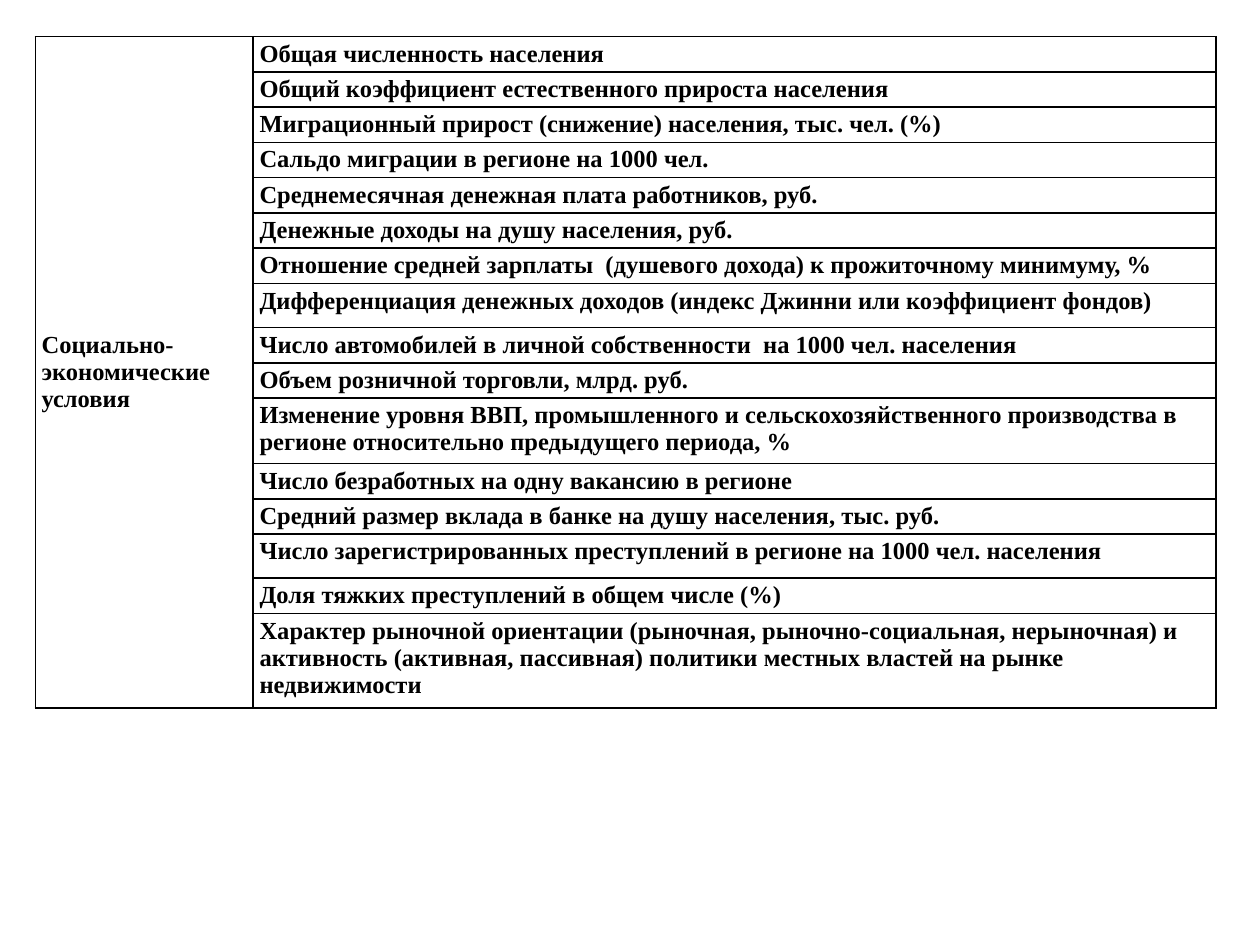
from dataclasses import dataclass

from lxml import etree
from pptx import Presentation, util as u
from pptx.dml.color import RGBColor
from pptx.enum import text
from pptx.oxml import ns


@dataclass(frozen=True)
class Theme:
    font: str = "Times New Roman"
    size: int = 14
    ink: str = "000000"
    line: int = 1
    pad_x: float = 0.05
    pad_y: float = 0.03


THEME = Theme()

# Content: the group, then each indicator with its row kind
GROUP = "Социально-экономические условия"
FACTORS = [
    ("Общая численность населения", "line"),
    ("Общий коэффициент естественного прироста населения", "line"),
    ("Миграционный прирост (снижение) населения, тыс. чел. (%)", "line"),
    ("Сальдо миграции в регионе на 1000 чел.", "line"),
    ("Среднемесячная денежная плата работников, руб.", "line"),
    ("Денежные доходы на душу населения, руб.", "line"),
    ("Отношение средней зарплаты  (душевого дохода) к прожиточному минимуму, %", "line"),
    ("Дифференциация денежных доходов (индекс Джинни или коэффициент фондов)", "loose"),
    ("Число автомобилей в личной собственности  на 1000 чел. населения", "line"),
    ("Объем розничной торговли, млрд. руб.", "line"),
    ("Изменение уровня ВВП, промышленного и сельскохозяйственного производства "
     "в регионе относительно предыдущего периода, %", "double"),
    ("Число безработных на одну вакансию в регионе", "line"),
    ("Средний размер вклада в банке на душу населения, тыс. руб.", "line"),
    ("Число зарегистрированных преступлений в регионе на 1000 чел. населения", "loose"),
    ("Доля тяжких преступлений в общем числе (%)", "line"),
    ("Характер рыночной ориентации (рыночная, рыночно-социальная, нерыночная) "
     "и активность (активная, пассивная) политики местных властей на рынке "
     "недвижимости", "triple"),
]

# Grid, in inches
LEFT, TOP = 0.28, 0.29
COLS = (1.73, 7.64)
HEIGHTS = {"line": 0.28, "loose": 0.35, "double": 0.52, "triple": 0.75}


def frame(cell):
    """Draw the four borders, clear the fill and set the margins."""
    props = cell._tc.get_or_add_tcPr()
    for side in ("lnL", "lnR", "lnT", "lnB"):
        line = etree.SubElement(props, ns.qn(f"a:{side}"), w=str(u.Pt(THEME.line)))
        fill = etree.SubElement(line, ns.qn("a:solidFill"))
        etree.SubElement(fill, ns.qn("a:srgbClr"), val=THEME.ink)
    cell.fill.background()
    cell.margin_left = cell.margin_right = u.Inches(THEME.pad_x)
    cell.margin_top = cell.margin_bottom = u.Inches(THEME.pad_y)


def write(cell, words):
    run = cell.text_frame.paragraphs[0].add_run()
    run.text = words
    font = run.font
    font.name, font.size, font.bold = THEME.font, u.Pt(THEME.size), True
    font.color.rgb = RGBColor.from_string(THEME.ink)


def main():
    deck = Presentation()
    deck.slide_width, deck.slide_height = u.Inches(10), u.Inches(7.5)
    slide = deck.slides.add_slide(deck.slide_layouts[6])

    # Table
    rows = [HEIGHTS[kind] for _, kind in FACTORS]
    box = [u.Inches(n) for n in (LEFT, TOP, sum(COLS), sum(rows))]
    table = slide.shapes.add_table(len(rows), len(COLS), *box).table
    table.first_row = table.horz_banding = False
    for col, width in zip(table.columns, COLS):
        col.width = u.Inches(width)
    for row, height in zip(table.rows, rows):
        row.height = u.Inches(height)
    for cell in table.iter_cells():
        frame(cell)

    # Group cell spans all the rows
    group = table.cell(0, 0)
    group.merge(table.cell(len(rows) - 1, 0))
    group.vertical_anchor = text.MSO_ANCHOR.MIDDLE
    write(group, GROUP)

    # Indicators
    for i, (words, _) in enumerate(FACTORS):
        write(table.cell(i, 1), words)

    deck.save("out.pptx")


if __name__ == "__main__":
    main()
